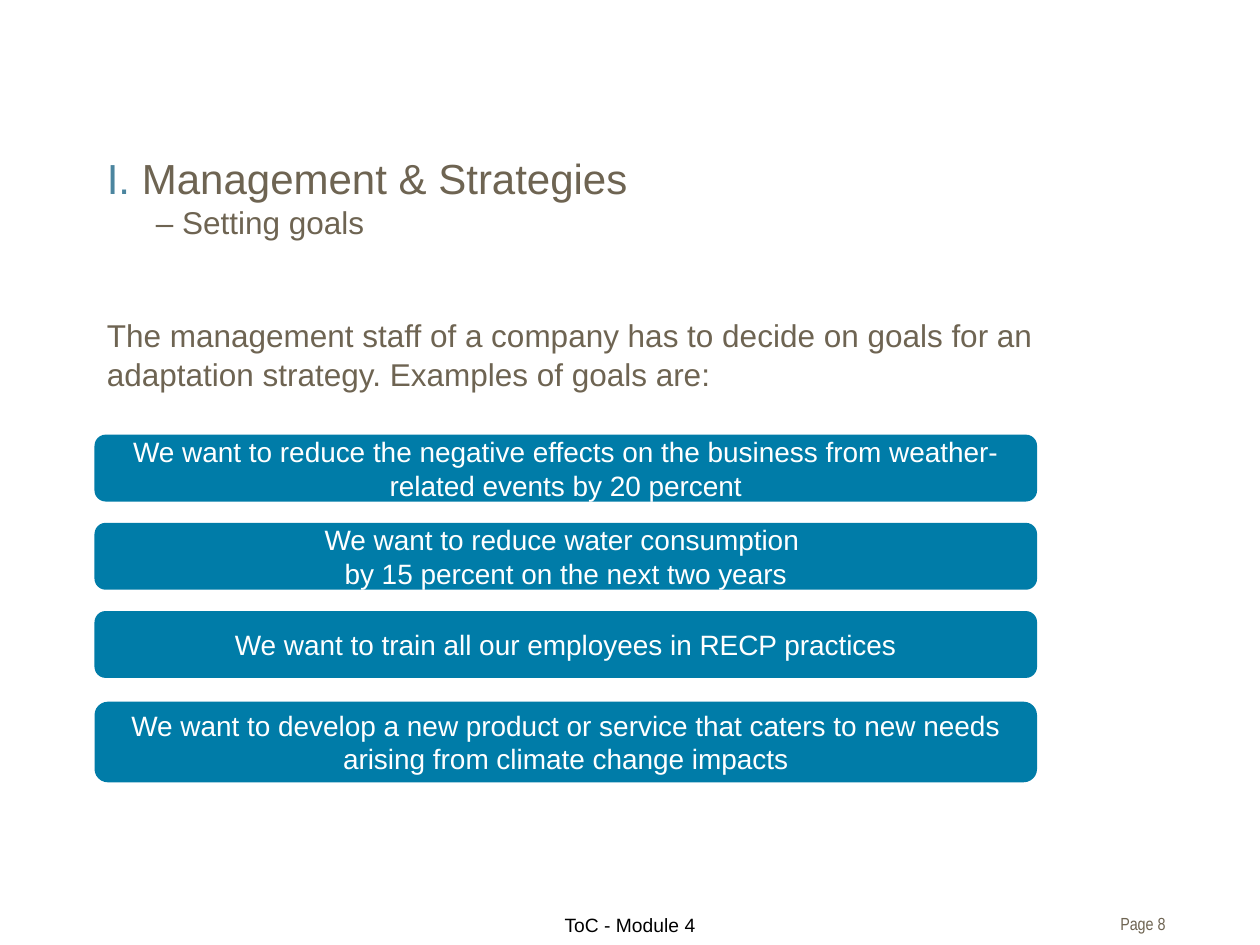
from pptx import Presentation
from pptx.dml.color import RGBColor
from pptx.enum.shapes import MSO_SHAPE
from pptx.enum.text import MSO_ANCHOR, PP_ALIGN
from pptx.util import Pt

ROUNDED = MSO_SHAPE.ROUNDED_RECTANGLE
TOP, MIDDLE = MSO_ANCHOR.TOP, MSO_ANCHOR.MIDDLE
LEFT, CENTER, RIGHT = PP_ALIGN.LEFT, PP_ALIGN.CENTER, PP_ALIGN.RIGHT

BLUE = RGBColor(0x00, 0x7C, 0xA8)
STEEL = RGBColor(0x4B, 0x85, 0x9F)
BROWN = RGBColor(0x6E, 0x64, 0x52)
WHITE = RGBColor(0xFF, 0xFF, 0xFF)
BLACK = RGBColor(0x00, 0x00, 0x00)

GOALS = [
    "We want to reduce the negative effects on the business from weather-related events by 20 percent",
    "We want to reduce water consumption \vby 15 percent on the next two years",
    "We want to train all our employees in RECP practices",
    "We want to develop a new product or service that caters to new needs arising from climate change impacts",
]
GOAL_PITCH, GOAL_HEIGHT = 50.4, 38.2
LAST_GOAL_TOP, LAST_GOAL_HEIGHT = 152.6, 46.1


def apply_format(target, values):
    for name, value in values.items():
        setattr(target, name, value)


def format_font(font, size, color, name="Arial"):
    apply_format(font, {"name": name, "size": Pt(size)})
    font.color.rgb = color


def add_text_box(slide, box, alignment=LEFT, **frame_format):
    frame = slide.shapes.add_textbox(*map(Pt, box)).text_frame
    apply_format(frame, {"word_wrap": True, "vertical_anchor": TOP, **frame_format})
    paragraph = frame.paragraphs[0]
    paragraph.alignment = alignment
    return paragraph


def add_run(paragraph, text, size, color, name="Arial"):
    run = paragraph.add_run()
    run.text = text
    format_font(run.font, size, color, name)


def add_title(slide, box):
    paragraph = add_text_box(slide, box)
    properties = paragraph._p.get_or_add_pPr()
    properties.set("marL", str(Pt(28)))
    properties.set("indent", str(-Pt(28)))
    add_run(paragraph, "I. ", 24, STEEL)
    add_run(paragraph, "Management & Strategies", 24, BROWN)
    paragraph.add_line_break()
    add_run(paragraph, "– Setting goals", 18, BROWN)


def add_introduction(slide, box):
    paragraph = add_text_box(slide, box)
    apply_format(paragraph, {"line_spacing": 1.05, "space_after": Pt(8)})
    add_run(
        paragraph,
        "The management staff of a company has to decide on goals for an adaptation strategy. Examples of goals are:",
        18,
        BROWN,
    )


def add_goal(slide, box, text):
    shape = slide.shapes.add_shape(ROUNDED, *map(Pt, box))
    shape.shadow.inherit = False
    shape.fill.solid()
    shape.fill.fore_color.rgb = BLUE
    shape.line.fill.background()
    frame = shape.text_frame
    apply_format(frame, {"word_wrap": True, "vertical_anchor": MIDDLE})
    paragraph = frame.paragraphs[0]
    paragraph.text = text
    paragraph.alignment = CENTER
    for run in paragraph.runs:
        format_font(run.font, 16, WHITE)


def add_goals(slide, left, top, width):
    for index, text in enumerate(GOALS[:-1]):
        add_goal(slide, (left, top + index * GOAL_PITCH, width, GOAL_HEIGHT), text)
    add_goal(slide, (left, top + LAST_GOAL_TOP, width, LAST_GOAL_HEIGHT), GOALS[-1])


def add_footer(slide, top, height):
    page = add_text_box(slide, (593.3, top, 72.7, height), RIGHT, margin_right=0)
    add_run(page, "Page 8", 10, BROWN, "Arial Narrow")
    module = add_text_box(slide, (225.4, top, 269.2, height), CENTER)
    add_run(module, "ToC - Module 4", 11, BLACK)


def main():
    presentation = Presentation()
    apply_format(presentation, {"slide_width": Pt(720), "slide_height": Pt(540)})
    slide = presentation.slides.add_slide(presentation.slide_layouts[6])
    add_title(slide, (54, 83.5, 612, 70.6))
    add_introduction(slide, (54, 175.7, 612, 313.2))
    add_goals(slide, 54, 248.4, 538.6)
    add_footer(slide, 518.4, 19.4)
    presentation.save("out.pptx")


if __name__ == "__main__":
    main()
